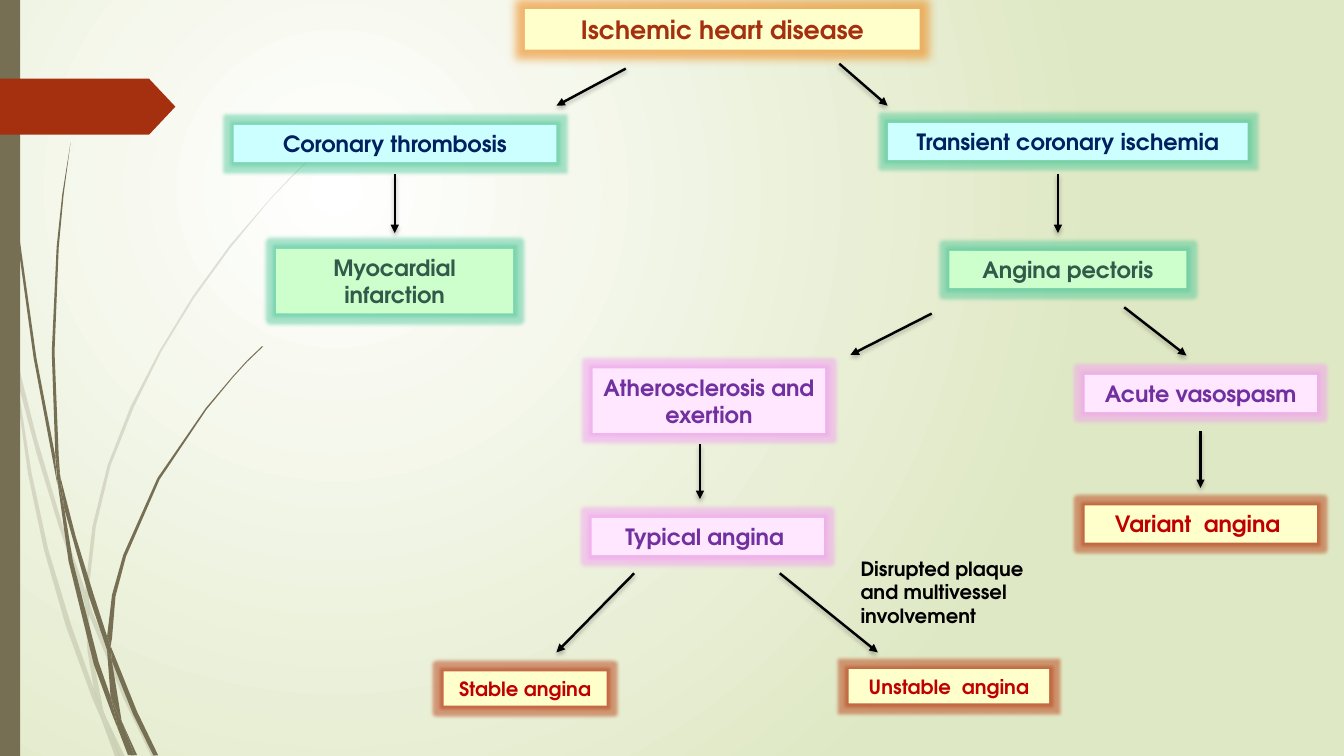
from dataclasses import dataclass

from lxml import etree
from pptx import Presentation
from pptx.dml.color import RGBColor
from pptx.enum.shapes import MSO_CONNECTOR, MSO_SHAPE
from pptx.enum.text import MSO_ANCHOR, MSO_AUTO_SIZE, PP_ALIGN
from pptx.oxml.ns import qn
from pptx.util import Pt

RECTANGLE = MSO_SHAPE.RECTANGLE
PENTAGON = MSO_SHAPE.PENTAGON
STRAIGHT = MSO_CONNECTOR.STRAIGHT
CENTER, LEFT = PP_ALIGN.CENTER, PP_ALIGN.LEFT
MIDDLE, TOP = MSO_ANCHOR.MIDDLE, MSO_ANCHOR.TOP
NO_AUTOFIT = MSO_AUTO_SIZE.NONE
TITLE_ONLY = 5
FONT = "TeX Gyre Adventor"

COLORS = {
    "white": "FFFFFF", "sage": "DFE8C4", "olive": "766F54", "rust": "A53010",
    "black": "000000", "navy": "002060", "forest": "325949", "purple": "7030A0",
    "red": "C00000", "yellow": "FFFFCC", "cyan": "CCFFFF", "mint": "CCFFCC",
    "pink": "FFE7FF", "orange glow": "EE8A1A", "teal glow": "4FC99A",
    "pink glow": "F49CF4", "rust glow": "B83A10",
}


@dataclass(frozen=True)
class Style:
    fill: str
    font: str
    glow: str
    size: float = 16
    glow_radius: float = 5
    glow_alpha: int = 48


@dataclass(frozen=True)
class Box:
    text: str
    left: float
    top: float
    width: float
    height: float
    style: Style


@dataclass(frozen=True)
class Arrow:
    start: tuple[float, float]
    end: tuple[float, float]


@dataclass(frozen=True)
class Wisp:
    alpha: int
    outlines: list[list[tuple[float, float]]]


DISEASE = Style("yellow", "rust", "orange glow", 18, 13, 60)
CAUSE = Style("cyan", "navy", "teal glow")
SYNDROME = Style("mint", "forest", "teal glow")
MECHANISM = Style("pink", "purple", "pink glow")
VARIANT = Style("yellow", "red", "rust glow")
OUTCOME = Style("yellow", "red", "rust glow", 14)

TITLE = Box("Ischemic heart disease", 375, 6.5, 282, 29, DISEASE)
BOXES = [
    Box("Coronary thrombosis", 167, 89.3, 230.4, 26.6, CAUSE),
    Box("Transient coronary ischemia", 634.3, 87.8, 257, 26.6, CAUSE),
    Box("Myocardial infarction", 197.3, 177.8, 169.2, 46, SYNDROME),
    Box("Angina pectoris", 678.2, 179.3, 169.2, 26.6, SYNDROME),
    Box("Atherosclerosis and exertion", 423.4, 263.2, 166, 46, MECHANISM),
    Box("Acute vasospasm", 774.7, 267.8, 166, 26.6, MECHANISM),
    Box("Typical angina ", 422.6, 370, 166, 26.6, MECHANISM),
    Box("Variant  angina ", 774.7, 361, 166, 26.6, VARIANT),
    Box("Stable angina", 316.8, 479.5, 116.6, 24.5, OUTCOME),
    Box("Unstable  angina", 606.2, 478, 143.3, 24.5, OUTCOME),
]
ARROWS = [
    Arrow((447, 49), (397.5, 75.5)), Arrow((599.5, 45.5), (634, 75.5)),
    Arrow((282, 124.5), (282, 166.5)), Arrow((755.7, 124.5), (755.7, 166.5)),
    Arrow((665.5, 224), (607.5, 253.5)), Arrow((803, 219.5), (847.5, 254)),
    Arrow((500, 317), (500, 356.5)), Arrow((857.5, 308), (857.5, 348.5)),
    Arrow((453, 409.5), (397.5, 466)), Arrow((557, 409.5), (627, 466)),
]
PALE_WISP = Wisp(20, [
    [(8, 252), (6.5, 232), (0, 203), (0, 215), (7, 247.5)],
    [(42, 376), (60.5, 431), (61, 422), (44.5, 374.5), (26, 312), (10, 248.5),
     (12, 270.5), (26, 323.5)],
    [(66, 437), (63.5, 429), (63.5, 439), (88.5, 499.5), (108, 540), (111.5, 540), (91.5, 498)],
    [(85.5, 540), (89, 540), (75.5, 512)],
    [(67, 492), (50.5, 445.5), (34.5, 392.5), (22.5, 337.5), (12, 270.5), (8, 252),
     (20, 338.5), (31.5, 393), (47, 447), (66, 499), (72.5, 514), (71.5, 509)],
    [(60.5, 431), (62.5, 465), (67, 492), (69, 498), (75.5, 512), (74, 508.5),
     (65.5, 465), (63.5, 439), (63.5, 438)],
    [(63.5, 420.5), (68.5, 376), (79, 332.5), (95.5, 291), (115, 251.5), (138.5, 213),
     (165, 176.5), (193, 142.5), (209, 126), (224.5, 111), (224.5, 110), (208, 126),
     (193, 142), (164, 175.5), (137.5, 212), (114, 250.5), (93.5, 290), (77, 332),
     (66, 376), (61, 420.5), (61, 422), (63.5, 429)],
    [(72.5, 514), (82, 540), (85.5, 540)],
    [(63.5, 438), (63.5, 439), (63.5, 429), (61, 422), (60.5, 431)],
    [(69, 498), (67, 492), (71.5, 509), (72.5, 514), (85.5, 540), (75.5, 512)],
])
DARK_WISP = Wisp(100, [
    [(5, 79), (12, 168), (24, 255.5), (40.5, 343.5), (41, 346.5), (39.5, 329), (39.5, 326),
     (26, 255.5), (13.5, 167), (6, 78.5), (3.5, 34.5), (3, 0), (2, 0), (3, 34.5)],
    [(63.5, 426), (76.5, 464.5), (76.5, 456), (76.5, 454.5), (67, 425), (54, 383),
     (43, 340), (46, 363.5)],
    [(81.5, 467.5), (79, 461.5), (80, 472.5), (95, 510), (109.5, 539.5), (113, 539.5),
     (98, 508.5)],
    [(79, 497.5), (70.5, 473), (52, 400.5), (46, 363.5), (41, 343.5), (49, 401),
     (67, 474.5), (80, 510), (84, 520), (83.5, 516)],
    [(43, 340), (42, 326), (39, 251.5), (42, 176.5), (45.5, 139), (50.5, 101.5),
     (44.5, 139), (40.5, 176.5), (37, 251.5), (39.5, 323.5)],
    [(96, 539.5), (98, 539.5), (88, 517.5)],
    [(41, 343.5), (46, 363.5), (43, 340), (39.5, 323.5), (39.5, 326)],
    [(80, 456), (82.5, 426), (90, 397.5), (114, 342.5), (147.5, 292.5), (166.5, 269.5),
     (176.5, 258.5), (188, 247.5), (187, 247.5), (176.5, 257.5), (166.5, 268.5),
     (147, 291.5), (112.5, 341.5), (88, 396.5), (80, 425), (76.5, 454.5), (79, 461.5)],
    [(84, 520), (91.5, 539.5), (94.5, 539.5)],
    [(76.5, 464.5), (79, 497.5), (83.5, 508.5), (88, 517.5), (87, 515.5), (80, 472.5),
     (78.5, 468.5)],
    [(76.5, 464.5), (78.5, 468.5), (80, 472.5), (79, 461.5), (76.5, 454.5), (76.5, 456)],
    [(83.5, 508.5), (79, 497.5), (83.5, 516), (84, 520), (93.5, 539.5), (96, 539.5),
     (88, 517.5)],
])


def rgb(name: str) -> RGBColor:
    return RGBColor.from_string(COLORS[name])


def add_element(parent, tag: str, **attributes):
    return etree.SubElement(parent, qn(tag), {key: str(value) for key, value in attributes.items()})


def add_effect(effects, tag: str, color: str, alpha: int, **attributes) -> None:
    effect = add_element(effects, tag, **attributes)
    color_element = add_element(effect, "a:srgbClr", val=COLORS[color])
    add_element(color_element, "a:alpha", val=alpha * 1000)


def write_text(shape, text: str, *, size: float, color: str, align=CENTER, anchor=MIDDLE) -> None:
    frame = shape.text_frame
    frame.word_wrap = True
    frame.auto_size = NO_AUTOFIT
    frame.vertical_anchor = anchor
    frame.margin_left = frame.margin_right = Pt(7)
    frame.margin_top = frame.margin_bottom = Pt(3.6)
    paragraph = frame.paragraphs[0]
    paragraph.alignment = align
    run = paragraph.add_run()
    run.text = text
    run.font.name, run.font.size, run.font.bold = FONT, Pt(size), True
    run.font.color.rgb = rgb(color)


def fill_plain(shape, color: str) -> None:
    shape.fill.solid()
    shape.fill.fore_color.rgb = rgb(color)
    shape.line.fill.background()
    shape.shadow.inherit = False


def format_box(shape, box: Box) -> None:
    style = box.style
    shape.left, shape.top = Pt(box.left), Pt(box.top)
    shape.width, shape.height = Pt(box.width), Pt(box.height)
    fill_plain(shape, style.fill)
    effects = shape.element.spPr.find(qn("a:effectLst"))
    add_effect(effects, "a:glow", style.glow, style.glow_alpha, rad=Pt(style.glow_radius))
    write_text(shape, box.text, size=style.size, color=style.font)


def add_arrow(slide, arrow: Arrow) -> None:
    connector = slide.shapes.add_connector(STRAIGHT, *map(Pt, arrow.start + arrow.end))
    connector.line.color.rgb = rgb("black")
    connector.line.width = Pt(1.75)
    add_element(connector.element.spPr.find(qn("a:ln")), "a:tailEnd", type="triangle")
    effects = add_element(connector.element.spPr, "a:effectLst")
    add_effect(effects, "a:outerShdw", "black", 25, blurRad=Pt(3), dist=Pt(2), dir=5400000)


def add_wisp(slide, wisp: Wisp) -> None:
    for outline in wisp.outlines:
        start, *others = [(Pt(x), Pt(y)) for x, y in outline]
        builder = slide.shapes.build_freeform(*start)
        builder.add_line_segments(others, close=True)
        shape = builder.convert_to_shape()
        fill_plain(shape, "olive")
        color_element = shape.element.spPr.find(qn("a:solidFill"))[0]
        add_element(color_element, "a:alpha", val=wisp.alpha * 1000)


def paint_background(slide) -> None:
    fill = slide.background.fill
    fill.gradient()
    for stop, color, position in zip(fill.gradient_stops, ("white", "sage"), (0, 1)):
        stop.color.rgb = rgb(color)
        stop.position = position
    gradient = slide.element.find(".//" + qn("a:gradFill"))
    circle = etree.Element(qn("a:path"), {"path": "circle"})
    add_element(circle, "a:fillToRect", l=50000, t=50000, r=100000, b=100000)
    gradient.replace(gradient.find(qn("a:lin")), circle)


def main() -> None:
    presentation = Presentation()
    presentation.slide_width, presentation.slide_height = Pt(960), Pt(540)
    slide = presentation.slides.add_slide(presentation.slide_layouts[TITLE_ONLY])
    paint_background(slide)
    for wisp in (PALE_WISP, DARK_WISP):
        add_wisp(slide, wisp)
    fill_plain(slide.shapes.add_shape(RECTANGLE, 0, 0, Pt(14.4), Pt(540)), "olive")
    page_tab = slide.shapes.add_shape(PENTAGON, 0, Pt(56.2), Pt(125.3), Pt(40))
    page_tab.adjustments[0] = 0.47
    fill_plain(page_tab, "rust")
    format_box(slide.shapes.title, TITLE)
    for box in BOXES:
        format_box(slide.shapes.add_shape(RECTANGLE, 0, 0, 0, 0), box)
    note = slide.shapes.add_textbox(Pt(607.7), Pt(394), Pt(148.3), Pt(58.3))
    write_text(note, "Disrupted plaque and multivessel involvement",
               size=14, color="black", align=LEFT, anchor=TOP)
    for arrow in ARROWS:
        add_arrow(slide, arrow)
    presentation.save("out.pptx")


if __name__ == "__main__":
    main()
